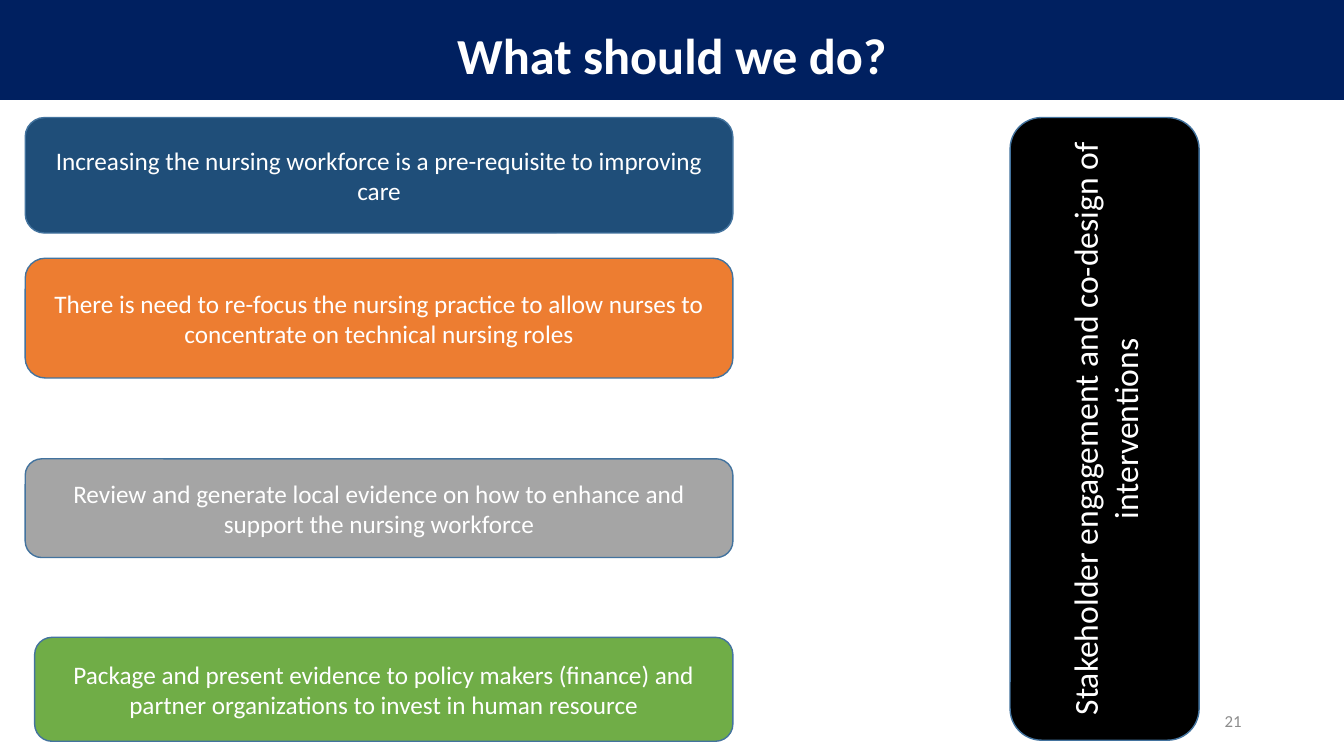
from pptx import Presentation
from pptx.dml.color import RGBColor
from pptx.enum.shapes import MSO_SHAPE
from pptx.enum.text import MSO_ANCHOR, MSO_AUTO_SIZE, PP_ALIGN
from pptx.util import Pt

EMU_PER_PX = 9525
FONT = "Calibri"
COLORS = {
    "navy": "002060",
    "blue": "1F4E79",
    "orange": "ED7D31",
    "grey": "A5A5A5",
    "green": "70AD47",
    "black": "000000",
    "outline": "43739E",
    "white": "FFFFFF",
    "number": "8C8C8C",
}
ACTIONS = [
    ((24, 112, 674, 110), "blue",
     "Increasing the nursing workforce is a pre-requisite to improving care"),
    ((24, 246, 674, 114), "orange",
     "There is need to re-focus the nursing practice to allow nurses to "
     "concentrate on technical nursing roles"),
    ((24, 437, 674, 94), "grey",
     "Review and generate local evidence on how to enhance and support "
     "the nursing workforce"),
    ((33, 607, 665, 99), "green",
     "Package and present evidence to policy makers (finance) and partner "
     "organizations to invest in human resource"),
]


def px(*lengths):
    return [n * EMU_PER_PX for n in lengths]


def color(name):
    return RGBColor.from_string(COLORS[name])


def set_text(sp, text, size, ink="white", align=PP_ALIGN.CENTER,
             anchor=MSO_ANCHOR.MIDDLE, bold=False):
    tf = sp.text_frame
    tf.word_wrap = True
    tf.auto_size = MSO_AUTO_SIZE.NONE
    tf.vertical_anchor = anchor
    p = tf.paragraphs[0]
    p.text = text
    p.alignment = align
    p.font.name = FONT
    p.font.size = Pt(size)
    p.font.bold = bold
    p.font.color.rgb = color(ink)


def add_box(s, kind, box, fill, line):
    sp = s.shapes.add_shape(kind, *px(*box))
    sp.shadow.inherit = False
    sp.fill.solid()
    sp.fill.fore_color.rgb = color(fill)
    sp.line.color.rgb = color(line)
    sp.line.width = Pt(1)
    return sp


def add_card(s, box, fill, text, size=18):
    sp = add_box(s, MSO_SHAPE.ROUNDED_RECTANGLE, box, fill, "outline")
    set_text(sp, text, size)
    return sp


def add_title(s, text):
    """Put the title over a full-width banner."""
    banner = add_box(s, MSO_SHAPE.RECTANGLE, (0, 0, 1280, 95), "navy", "navy")
    title = s.shapes.title
    title._element.addprevious(banner._element)
    title.left, title.top, title.width, title.height = px(0, 18, 1280, 68)
    set_text(title, text, 36, anchor=MSO_ANCHOR.TOP, bold=True)


def add_slide_number(s, number):
    sp = s.shapes.add_textbox(*px(904, 667, 288, 38))
    set_text(sp, number, 12, "number", PP_ALIGN.RIGHT)


def main():
    prs = Presentation()
    prs.slide_width, prs.slide_height = px(1280, 720)
    s = prs.slides.add_slide(prs.slide_layouts[5])
    add_title(s, "What should we do?")
    add_slide_number(s, "21")
    for box, fill, text in ACTIONS:
        add_card(s, box, fill, text)
    bar = add_card(s, (962, 112, 180, 593), "black",
                   "Stakeholder engagement and co-design of interventions", 24)
    bar.text_frame._txBody.bodyPr.set("vert", "vert270")
    prs.save("out.pptx")


if __name__ == "__main__":
    main()
